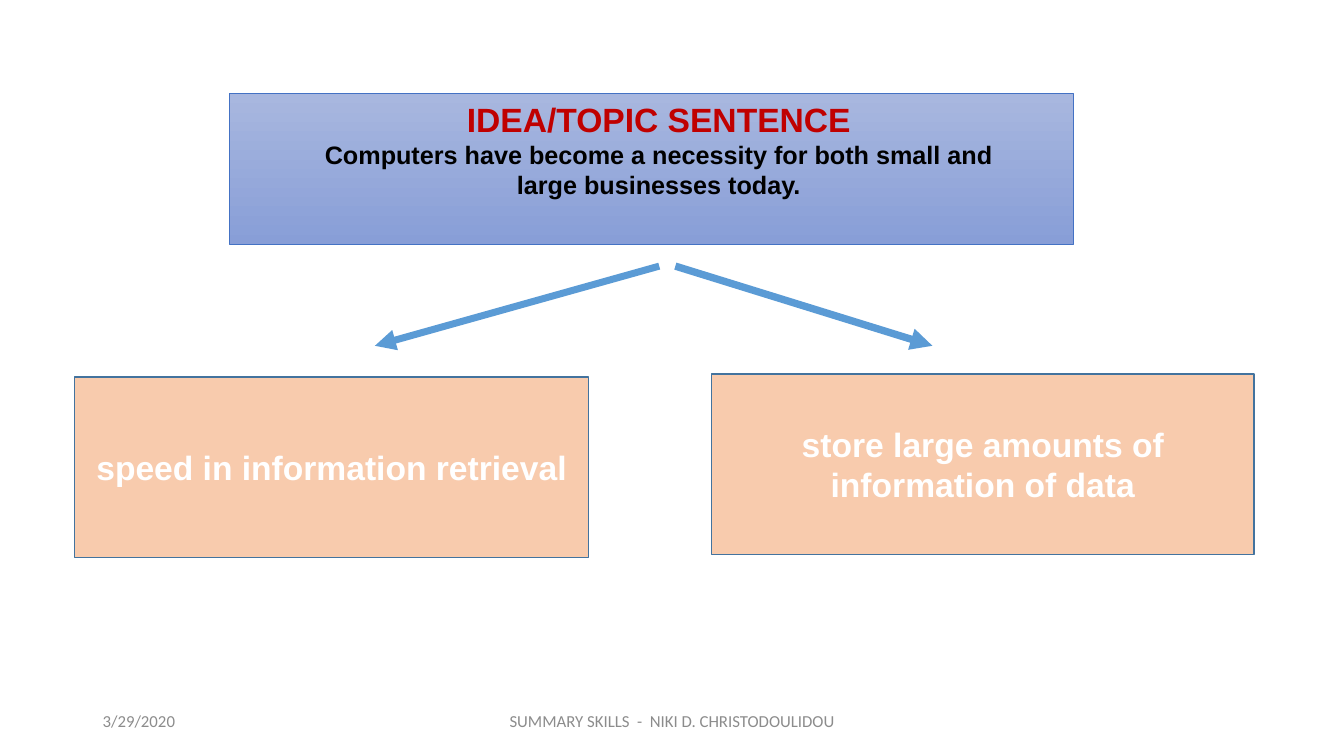
from lxml import etree
from pptx import Presentation
from pptx.dml.color import RGBColor
from pptx.enum import shapes, text
from pptx.oxml import ns
from pptx.util import Pt

# Positions are left, top, width, height in points
TOPIC_PANEL = (164.2, 67, 602.6, 107.3)
TOPIC_GRADIENT = ("A8B7DF", "889ED7")
TOPIC_TEXT_AREA = (164.2, 67, 612.7, 123.8)
TOPIC_LINES = [
    ("IDEA/TOPIC SENTENCE", 24, "C00000"),
    ("Computers have become a necessity for both small and", 18, "000000"),
    ("large businesses today.", 18, "000000"),
]
SUPPORTS = [
    ("speed in information retrieval", (53.3, 269.3, 367.2, 128.9)),
    ("store large amounts of information of data", (508.3, 267.1, 387.4, 128.9)),
]
ARROWS = [  # start, end, line width
    ((470.9, 190.1), (267.8, 247), 5),
    ((482.4, 190.1), (666, 247), 5.25),
]
FOOTERS = [
    ("3/29/2020", (66.2, 500.4, 216, 28.8), text.PP_ALIGN.LEFT),
    ("SUMMARY SKILLS  -  NIKI D. CHRISTODOULIDOU", (318.2, 500.4, 324, 28.8),
     text.PP_ALIGN.CENTER),
]


def color(value):
    return RGBColor.from_string(value)


def points(values):
    return [Pt(value) for value in values]


def write(box, lines, anchor, align=text.PP_ALIGN.CENTER, font="Arial", bold=True):
    """Put one paragraph in the box for each (wording, size, colour) line."""
    frame = box.text_frame
    frame.word_wrap = True
    frame.vertical_anchor = anchor
    for index, (wording, size, tint) in enumerate(lines):
        para = frame.paragraphs[0] if index == 0 else frame.add_paragraph()
        para.alignment = align
        span = para.add_run()
        span.text = wording
        for name, value in {"name": font, "size": Pt(size), "bold": bold}.items():
            setattr(span.font, name, value)
        span.font.color.rgb = color(tint)


def add_panel(page, area, line_color, line_width):
    panel = page.shapes.add_shape(shapes.MSO_SHAPE.RECTANGLE, *points(area))
    panel.shadow.inherit = False
    panel.line.color.rgb = color(line_color)
    panel.line.width = Pt(line_width)
    return panel


def add_arrow(page, start, end, width):
    arrow = page.shapes.add_connector(
        shapes.MSO_CONNECTOR.STRAIGHT, *points(start + end))
    arrow.line.color.rgb = color("5B9BD5")
    arrow.line.width = Pt(width)
    etree.SubElement(arrow.line._get_or_add_ln(), ns.qn("a:tailEnd"), type="triangle")
    etree.SubElement(arrow._element.spPr, ns.qn("a:effectLst"))


def main():
    deck = Presentation()
    deck.slide_width, deck.slide_height = Pt(960), Pt(540)
    page = deck.slides.add_slide(deck.slide_layouts[6])

    topic = add_panel(page, TOPIC_PANEL, "4472C4", 0.5)
    topic.fill.gradient()
    topic.fill.gradient_angle = 270
    for stop, tint, position in zip(topic.fill.gradient_stops, TOPIC_GRADIENT, (0, 1)):
        stop.color.rgb = color(tint)
        stop.position = position

    for wording, area in SUPPORTS:
        panel = add_panel(page, area, "43739E", 1)
        panel.fill.solid()
        panel.fill.fore_color.rgb = color("F8CBAD")
        write(panel, [(wording, 24, "FFFFFF")], text.MSO_ANCHOR.MIDDLE)

    topic_text = page.shapes.add_textbox(*points(TOPIC_TEXT_AREA))
    write(topic_text, TOPIC_LINES, text.MSO_ANCHOR.TOP)

    for start, end, width in ARROWS:
        add_arrow(page, start, end, width)

    for wording, area, align in FOOTERS:
        footer = page.shapes.add_textbox(*points(area))
        write(footer, [(wording, 12, "8C8C8C")], text.MSO_ANCHOR.MIDDLE,
              align, "Calibri", False)

    deck.save("out.pptx")


if __name__ == "__main__":
    main()
